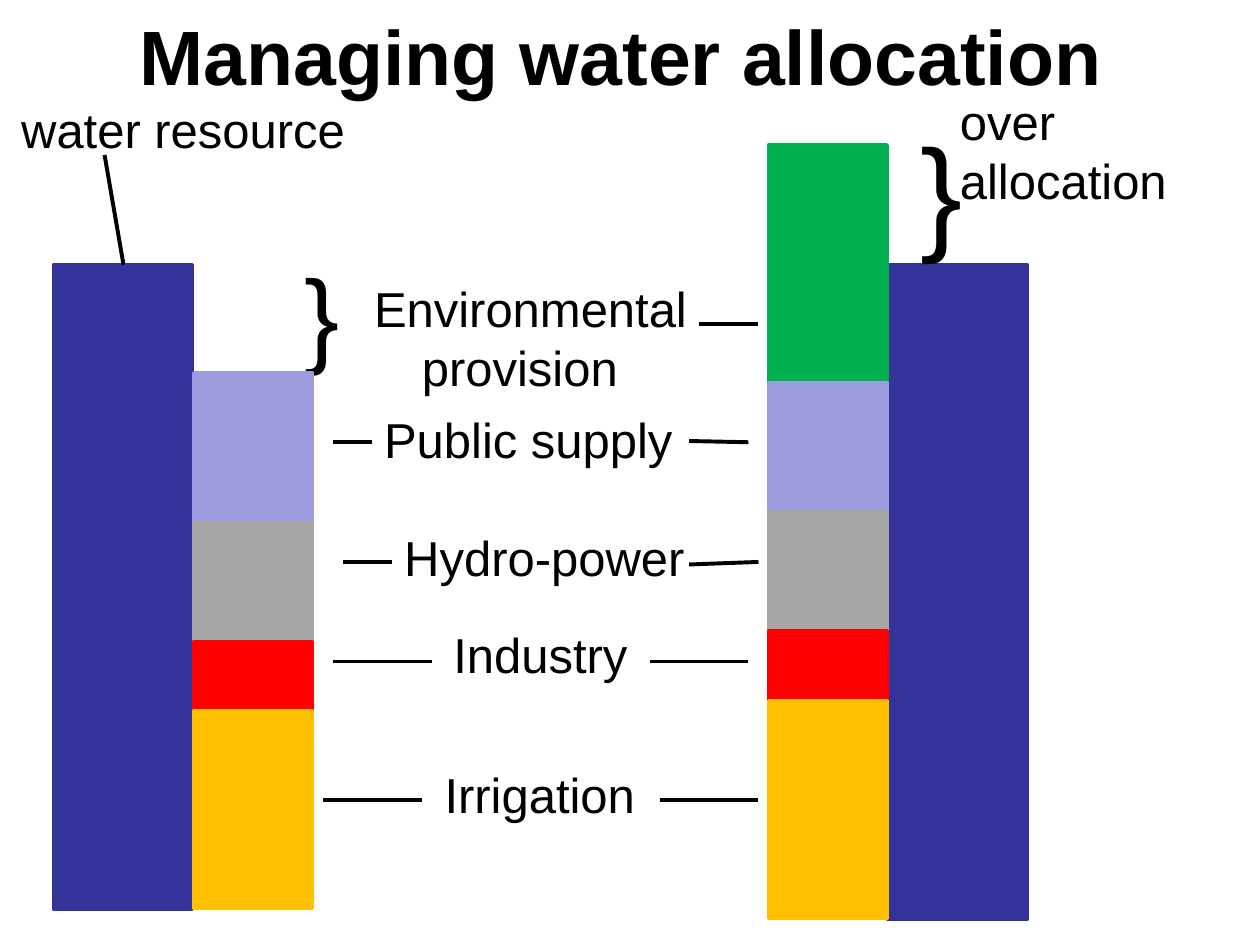
from pptx import Presentation
from pptx.dml.color import RGBColor
from pptx.enum.shapes import MSO_CONNECTOR, MSO_SHAPE
from pptx.enum.text import MSO_ANCHOR, PP_ALIGN
from pptx.oxml.ns import qn
from pptx.util import Inches, Pt
from lxml.etree import SubElement

COLORS = {
    "text": "000000",
    "resource": "333399",
    "environment": "00B050",
    "public": "9C9CDF",
    "hydro": "A6A6A6",
    "industry": "FF0000",
    "irrigation": "FFC000",
}


def color(name):
    return RGBColor.from_string(COLORS[name])


class SlideBuilder:
    font_name = "Arial"
    label_size = 28
    bar_width = 0.94

    def __init__(self, page):
        self.page = page

    def style(self, span, size, bold=False):
        values = {"name": self.font_name, "size": Pt(size), "bold": bold}
        for key, value in values.items():
            setattr(span.font, key, value)
        span.font.color.rgb = color("text")

    def title(self, text, left, top, width, height):
        box = self.page.shapes.title
        place = {"left": left, "top": top, "width": width, "height": height}
        for key, value in place.items():
            setattr(box, key, Inches(value))
        box.text_frame.vertical_anchor = MSO_ANCHOR.MIDDLE
        para = box.text_frame.paragraphs[0]
        para.alignment = PP_ALIGN.CENTER
        span = para.add_run()
        span.text = text
        self.style(span, 44, bold=True)

    def label(self, text, left, top, width, height, size=label_size, hanging=0):
        box = self.page.shapes.add_textbox(
            Inches(left), Inches(top), Inches(width), Inches(height))
        box.text_frame.word_wrap = True
        para = box.text_frame.paragraphs[0]
        if hanging:
            properties = para._p.get_or_add_pPr()
            properties.set("marL", str(Inches(hanging)))
            properties.set("indent", str(-Inches(hanging)))
        span = para.add_run()
        span.text = text
        self.style(span, size)

    def bar(self, name, left, top, width, height):
        shape = self.page.shapes.add_shape(
            MSO_SHAPE.RECTANGLE,
            Inches(left), Inches(top), Inches(width), Inches(height))
        shape.shadow.inherit = False
        shape.fill.solid()
        shape.fill.fore_color.rgb = color(name)
        shape.line.color.rgb = color(name)
        shape.line.width = Pt(2)
        return shape

    def stack(self, left, top, segments):
        for name, height in segments:
            self.bar(name, left, top, self.bar_width, height)
            top += height

    def line(self, x1, y1, x2, y2):
        connector = self.page.shapes.add_connector(
            MSO_CONNECTOR.STRAIGHT,
            Inches(x1), Inches(y1), Inches(x2), Inches(y2))
        connector.line.color.rgb = color("text")
        connector.line.width = Pt(2.25)
        SubElement(connector._element.spPr, qn("a:effectLst"))
        return connector


def main():
    deck = Presentation()
    deck.slide_width, deck.slide_height = Inches(10), Inches(7.5)
    page = deck.slides.add_slide(deck.slide_layouts[5])
    builder = SlideBuilder(page)

    builder.title("Managing water allocation", 0.43, -0.19, 9, 1.25)

    # Water resource bars
    resource = builder.bar("resource", 0.43, 2.1, 1.1, 5.12)
    builder.bar("resource", 7.05, 2.1, 1.1, 5.2)

    # Braces for the spare and the exceeded water
    builder.label("}", 2.32, 1.93, 0.79, 1.11, size=60)
    builder.label("}", 7.21, 0.84, 0.79, 1.31, size=72)

    # Stacked uses, from top to bottom
    builder.stack(1.54, 2.96, [
        ("public", 1.19), ("hydro", 0.94),
        ("industry", 0.55), ("irrigation", 1.57)])
    builder.stack(6.1, 1.15, [
        ("environment", 1.89), ("public", 1.02), ("hydro", 0.95),
        ("industry", 0.55), ("irrigation", 1.73)])

    # Labels
    for text, left, top, width, height, hanging in [
        ("water resource", 0.07, 0.74, 3.44, 0.73, 0),
        ("over allocation", 7.52, 0.68, 2.36, 0.98, 0),
        ("Environmental provision", 2.87, 2.16, 2.91, 0.73, 0.38),
        ("Public supply", 2.95, 3.2, 2.76, 1.1, 0),
        ("Hydro-power", 3.11, 4.14, 2.52, 0.73, 0),
        ("Industry", 3.5, 4.91, 1.89, 0.73, 0),
        ("Irrigation", 3.43, 6.02, 1.89, 0.73, 0),
    ]:
        builder.label(text, left, top, width, height, hanging=hanging)

    # Leader lines from the labels to the stacks
    for ends in [
        (5.55, 2.57, 6.02, 2.57),
        (2.95, 3.51, 2.64, 3.51), (5.94, 3.51, 5.47, 3.5),
        (3.11, 4.46, 2.72, 4.46), (6.02, 4.46, 5.47, 4.48),
        (3.43, 5.25, 2.64, 5.25), (5.94, 5.25, 5.16, 5.25),
        (3.35, 6.35, 2.56, 6.35), (6.02, 6.35, 5.24, 6.35),
    ]:
        builder.line(*ends)
    pointer = builder.line(0.98, 2.1, 0.83, 1.23)
    pointer.begin_connect(resource, 0)

    deck.save("out.pptx")


if __name__ == "__main__":
    main()
